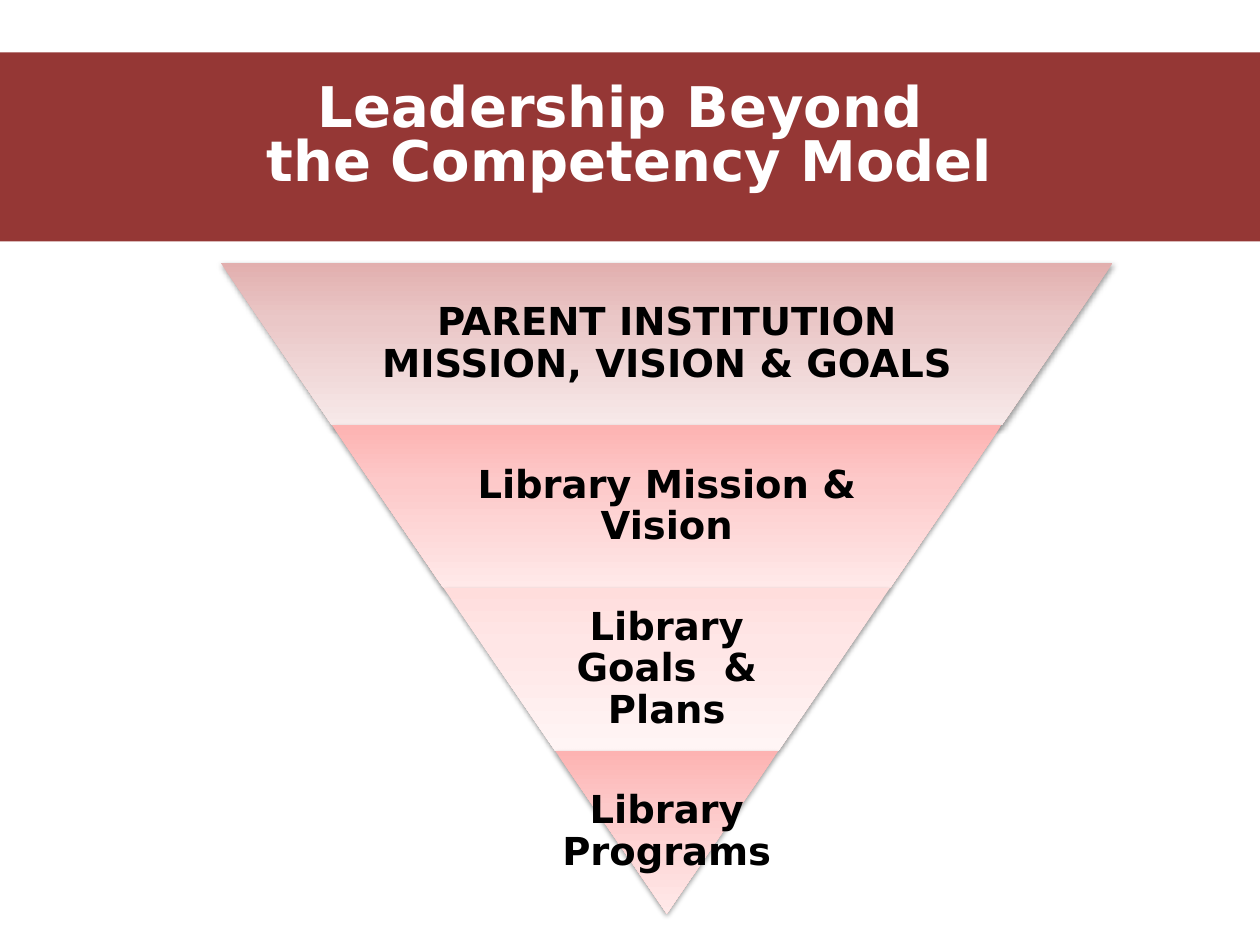
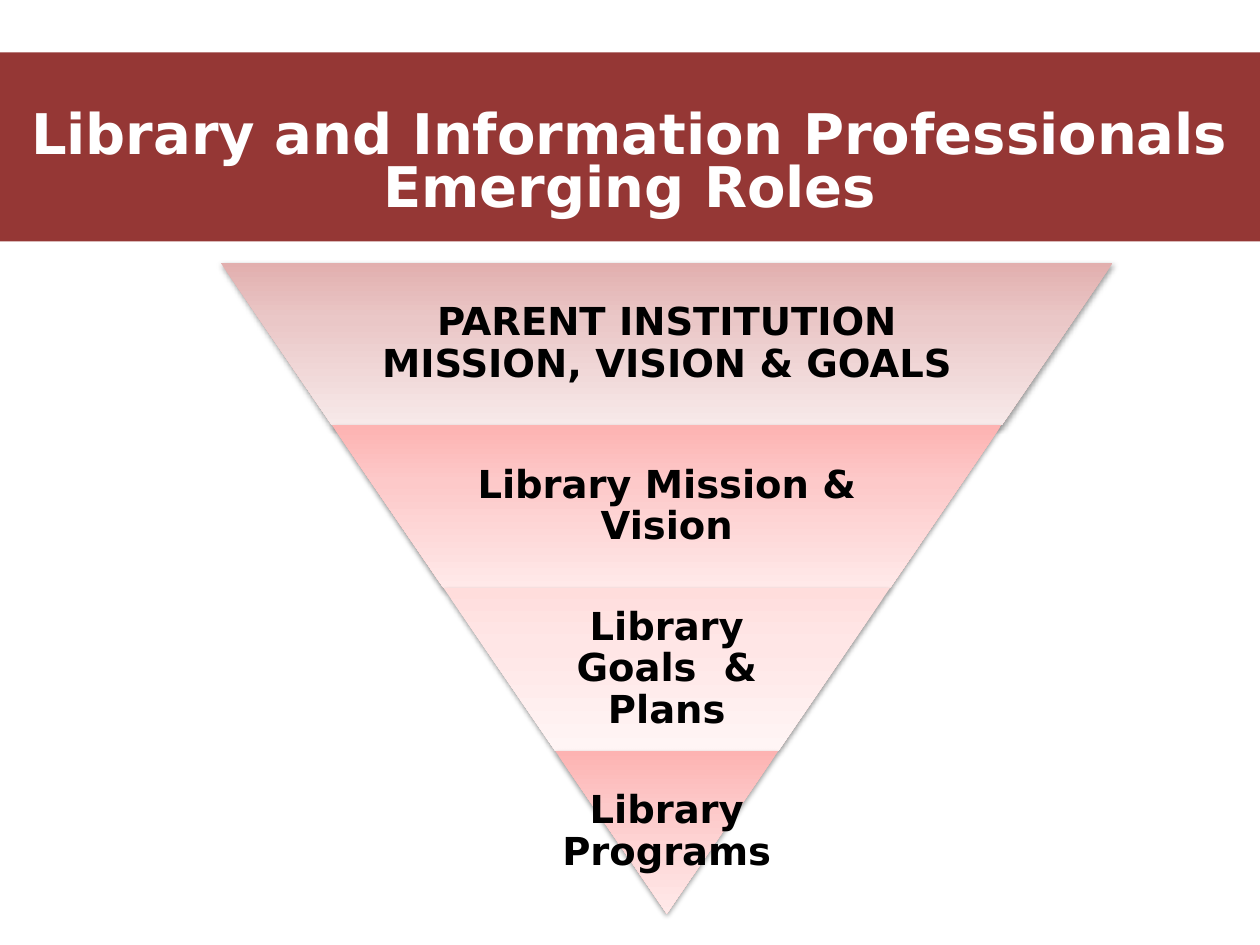
import lxml.etree
import pptx
import pptx.dml.color
import pptx.enum.shapes
import pptx.enum.text
import pptx.oxml
import pptx.oxml.ns
import pptx.util

Pt = pptx.util.Pt
MSO_SHAPE = pptx.enum.shapes.MSO_SHAPE
FONT = "DejaVu Sans"
BAND_COLOR = "953735"
ROSE = ("E2AFAE", "EAC7C7", "F7E9E9")
PINK = ("FDB3B2", "FDC9C9", "FFE9E9")
BLUSH = ("FFDDDC", "FFE6E6", "FFF5F5")
GRADIENT_POSITIONS = (0, 35000, 100000)

# Title lines, extra space above and extra space below them in the band
TITLES = [
    (["Leadership Beyond ", "the Competency Model"], 0, 10),
    (["Library and Information Professionals", "Emerging Roles"], 20.5, 0),
]
# Text, gradient and share of the level's width given to the text
LEVELS = [
    ("PARENT INSTITUTION MISSION, VISION & GOALS", ROSE, 0.65),
    ("Library Mission & Vision", PINK, 0.65),
    ("Library Goals  & Plans", BLUSH, 0.65),
    ("Library Programs", PINK, 1),
]
PYRAMID_CENTER, PYRAMID_TOP, PYRAMID_WIDTH = 381, 150, 510
LEVEL_HEIGHT = 93
SLOPE = 0.685


def write_text(shape, lines, size, color, line_spacing):
    text_frame = shape.text_frame
    text_frame.word_wrap = True
    text_frame.vertical_anchor = pptx.enum.text.MSO_ANCHOR.MIDDLE
    text_frame.text = "\n".join(lines)
    for paragraph in text_frame.paragraphs:
        paragraph.alignment = pptx.enum.text.PP_ALIGN.CENTER
        paragraph.line_spacing = line_spacing
        for run in paragraph.runs:
            run.font.name = FONT
            run.font.size = Pt(size)
            run.font.bold = True
            run.font.color.rgb = pptx.dml.color.RGBColor.from_string(color)


def add_gradient_and_shadow(shape, colors):
    namespace = pptx.oxml.ns.nsdecls("a")
    stops = "".join(
        f'<a:gs pos="{position}"><a:srgbClr val="{color}"/></a:gs>'
        for position, color in zip(GRADIENT_POSITIONS, colors)
    )
    gradient = pptx.oxml.parse_xml(
        f'<a:gradFill {namespace} rotWithShape="1"><a:gsLst>{stops}</a:gsLst>'
        '<a:lin ang="16200000" scaled="1"/></a:gradFill>'
    )
    shadow = pptx.oxml.parse_xml(
        f'<a:outerShdw {namespace} blurRad="{Pt(3.1)}" dist="{Pt(1.6)}" dir="5400000" '
        'rotWithShape="0"><a:srgbClr val="000000"><a:alpha val="38000"/></a:srgbClr></a:outerShdw>'
    )
    shape.fill.background()
    shape.line.fill.background()
    shape.shadow.inherit = False
    properties = shape.element.spPr
    properties.replace(properties.find(pptx.oxml.ns.qn("a:noFill")), gradient)
    properties.find(pptx.oxml.ns.qn("a:effectLst")).append(shadow)


presentation = pptx.Presentation()
presentation.slide_width = Pt(720)
presentation.slide_height = Pt(540)

for title_lines, space_above, space_below in TITLES:
    slide = presentation.slides.add_slide(presentation.slide_layouts[6])

    band = slide.shapes.add_shape(MSO_SHAPE.RECTANGLE, 0, Pt(30), Pt(720), Pt(108))
    band.shadow.inherit = False
    band.fill.solid()
    band.fill.fore_color.rgb = pptx.dml.color.RGBColor.from_string(BAND_COLOR)
    band.line.fill.background()
    band.text_frame.margin_top = Pt(3.6 + space_above)
    band.text_frame.margin_bottom = Pt(3.6 + space_below)
    write_text(band, title_lines, 32, "FFFFFF", 0.8)

    pyramid = slide.shapes.add_group_shape()
    for index, (text, colors, text_share) in enumerate(LEVELS):
        top = PYRAMID_TOP + index * LEVEL_HEIGHT
        width = PYRAMID_WIDTH * (len(LEVELS) - index) / len(LEVELS)
        level = pyramid.shapes.add_shape(
            MSO_SHAPE.TRAPEZOID, Pt(PYRAMID_CENTER - width / 2), Pt(top), Pt(width), Pt(LEVEL_HEIGHT)
        )
        level.adjustments[0] = SLOPE
        level.rotation = 180
        add_gradient_and_shadow(level, colors)

        text_width = width * text_share
        label = pyramid.shapes.add_textbox(
            Pt(PYRAMID_CENTER - text_width / 2), Pt(top), Pt(text_width), Pt(LEVEL_HEIGHT)
        )
        for side in ("left", "top", "right", "bottom"):
            setattr(label.text_frame, f"margin_{side}", Pt(2.2))
        write_text(label, [text], 22, "000000", 0.9)

presentation.save("out.pptx")
